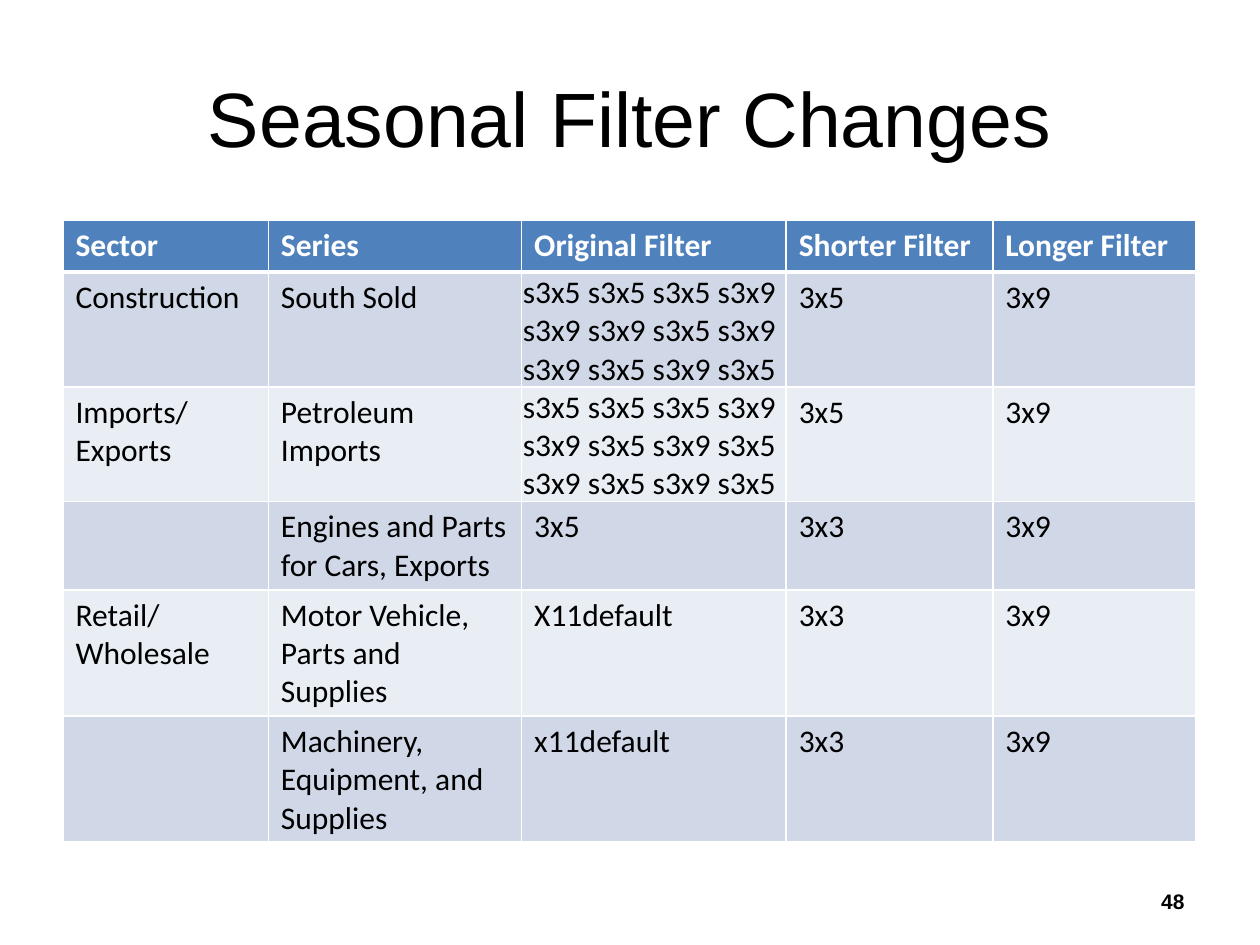
from lxml.etree import SubElement
from pptx import Presentation
from pptx.dml.color import RGBColor
from pptx.enum.text import MSO_ANCHOR as Anchor, PP_ALIGN as Align
from pptx.oxml.ns import qn
from pptx.util import Inches, Pt

WHITE = RGBColor(0xFF, 0xFF, 0xFF)
BLACK = RGBColor(0, 0, 0)
HEADER_BLUE = RGBColor(0x4F, 0x81, 0xBD)
BANDS = [RGBColor(0xD0, 0xD8, 0xE8), RGBColor(0xE9, 0xED, 0xF4)]

COLUMNS = [1.63, 2.01, 2.1, 1.64, 1.61]
ROW_HEIGHT = 0.41
FILTERS = [
    ("Sector", "Series", "Original Filter", "Shorter Filter", "Longer Filter"),
    ("Construction", "South Sold",
     "s3x5 s3x5 s3x5 s3x9 s3x9 s3x9 s3x5 s3x9 s3x9 s3x5 s3x9 s3x5",
     "3x5", "3x9"),
    ("Imports/\nExports", "Petroleum Imports",
     "s3x5 s3x5 s3x5 s3x9 s3x9 s3x5 s3x9 s3x5 s3x9 s3x5 s3x9 s3x5",
     "3x5", "3x9"),
    ("", "Engines and Parts for Cars, Exports", "3x5", "3x3", "3x9"),
    ("Retail/\nWholesale", "Motor Vehicle, Parts and Supplies", "X11default",
     "3x3", "3x9"),
    ("", "Machinery, Equipment, and Supplies", "x11default", "3x3", "3x9"),
]


def style(paragraph, font_name, size, color, bold=False):
    font = paragraph.font
    font.name, font.size, font.bold = font_name, Pt(size), bold
    font.color.rgb = color


def add_label(slide, box, text, size, align, bold=False):
    frame = slide.shapes.add_textbox(*map(Inches, box)).text_frame
    frame.word_wrap = True
    frame.vertical_anchor = Anchor.MIDDLE
    frame.text = text
    label = frame.paragraphs[0]
    label.alignment = align
    style(label, "Arial", size, BLACK, bold)


def set_borders(cell, **widths):
    """Draw white borders; widths are points keyed by side, in L, R, T, B order."""
    properties = cell._tc.get_or_add_tcPr()
    for position, (side, width) in enumerate(widths.items()):
        line = SubElement(properties, qn(f"a:ln{side}"), w=str(Pt(width)))
        fill = SubElement(line, qn("a:solidFill"))
        SubElement(fill, qn("a:srgbClr"), val=str(WHITE))
        properties.insert(position, line)


def fill_cell(cell, text, row):
    header = row == 0
    cell.fill.solid()
    cell.fill.fore_color.rgb = HEADER_BLUE if header else BANDS[(row - 1) % 2]
    cell.text = text
    for paragraph in cell.text_frame.paragraphs:
        style(paragraph, "Calibri", 18, WHITE if header else BLACK, header)
    if text.startswith("s3x"):
        cell.vertical_anchor = Anchor.BOTTOM
        cell.margin_left = cell.margin_right = cell.margin_top = Inches(0.01)
        cell.margin_bottom = 0
    set_borders(cell, L=1, R=1, T=3 if row == 1 else 1, B=3 if header else 1)


def add_filter_table(slide, left, top):
    table = slide.shapes.add_table(
        len(FILTERS), len(COLUMNS), Inches(left), Inches(top),
        Inches(sum(COLUMNS)), Inches(ROW_HEIGHT * len(FILTERS))).table
    for column, width in zip(table.columns, COLUMNS):
        column.width = Inches(width)
    for row, texts in enumerate(FILTERS):
        for column, text in enumerate(texts):
            fill_cell(table.cell(row, column), text, row)


def main():
    deck = Presentation()
    deck.slide_width, deck.slide_height = Inches(10), Inches(7.5)
    slide = deck.slides.add_slide(deck.slide_layouts[6])
    add_label(slide, (0.5, 0.3, 9, 1.25), "Seasonal Filter Changes", 44, Align.CENTER)
    add_filter_table(slide, 0.5, 1.75)
    add_label(slide, (7.17, 6.95, 2.33, 0.4), "48", 12, Align.RIGHT, bold=True)
    deck.save("out.pptx")


if __name__ == "__main__":
    main()
